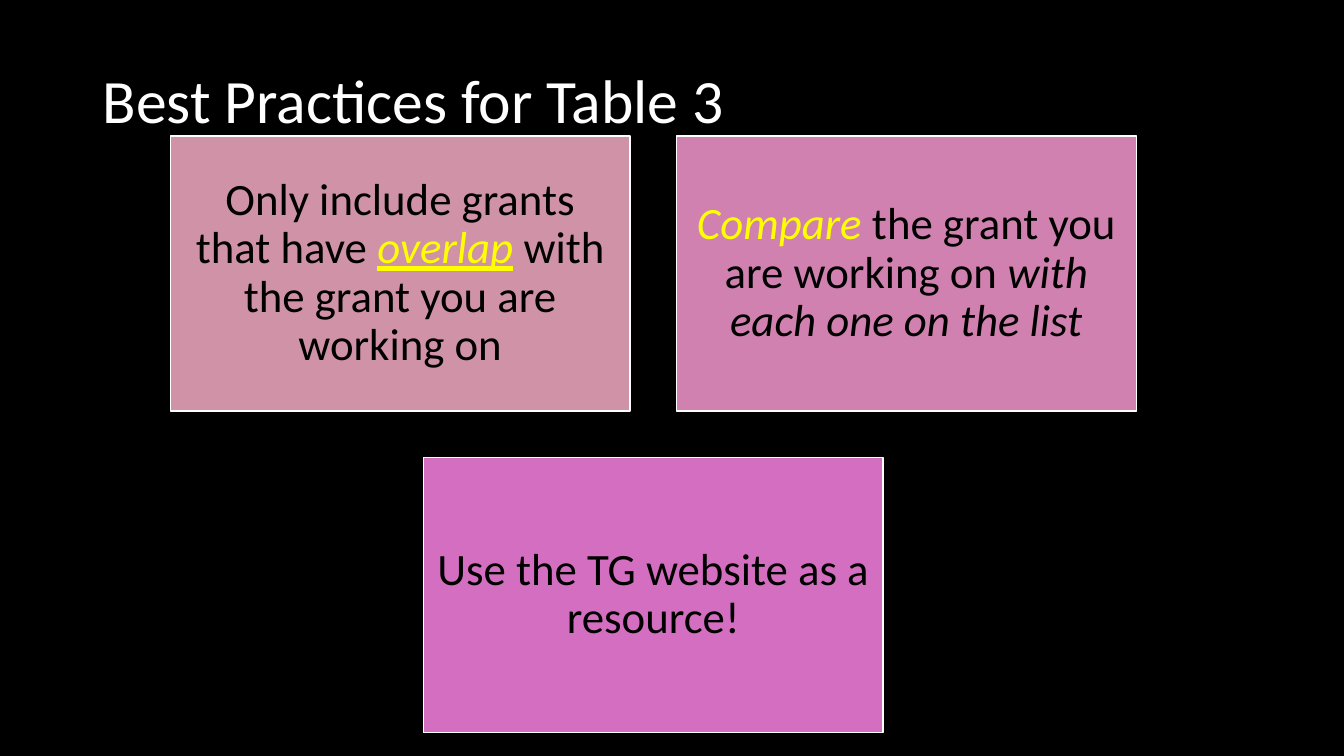
from pptx import Presentation
from pptx.dml.color import RGBColor
from pptx.enum import shapes, text
from pptx.util import Inches, Pt

HEADING = "Best Practices for Table 3"
PRACTICES = [
    ("D092A7", [("Only include grants that have ", ""),
                ("overlap", "highlight italic underline"),
                (" with the grant you are working on", "")]),
    ("D181AF", [("Compare", "highlight italic"),
                (" the grant you are working on ", ""),
                ("with each one on the list", "italic")]),
    ("D46EC1", [("Use the TG website as a resource!", "")]),
]
THEME = {
    "font": "Calibri", "heading_size": 44, "card_size": 32,
    "background": "000000", "heading": "FFFFFF", "border": "FFFFFF",
    "body": "000000", "highlight": "FFFF00",
}
SLIDE_W, SLIDE_H = 13.33, 7.5
COLUMNS = 2
CARD_W, CARD_H, GAP, INSET = 4.56, 2.73, 0.46, 0.13
GRID_LEFT, GRID_TOP = 1.69, 1.35
GRID_W = COLUMNS * CARD_W + (COLUMNS - 1) * GAP


def color(name):
    return RGBColor.from_string(THEME[name])


def style_paragraph(paragraph, size, align):
    paragraph.alignment = align
    paragraph.line_spacing = 0.9
    paragraph.font.name = THEME["font"]
    paragraph.font.size = Pt(size)


def add_heading(slide):
    heading = slide.shapes.add_textbox(Inches(0.92), Inches(0.4), Inches(11.5), Inches(1.25))
    frame = heading.text_frame
    frame.word_wrap = True
    frame.vertical_anchor = text.MSO_ANCHOR.MIDDLE
    line = frame.paragraphs[0]
    line.text = HEADING
    style_paragraph(line, THEME["heading_size"], text.PP_ALIGN.LEFT)
    line.font.color.rgb = color("heading")


def add_card(slide, left, top, fill, phrases):
    card = slide.shapes.add_shape(shapes.MSO_SHAPE.RECTANGLE, Inches(left), Inches(top),
                                  Inches(CARD_W), Inches(CARD_H))
    card.shadow.inherit = False
    card.fill.solid()
    card.fill.fore_color.rgb = RGBColor.from_string(fill)
    card.line.color.rgb = color("border")
    card.line.width = Pt(1)
    frame = card.text_frame
    frame.word_wrap = True
    frame.vertical_anchor = text.MSO_ANCHOR.MIDDLE
    frame.margin_left = frame.margin_right = Inches(INSET)
    frame.margin_top = frame.margin_bottom = Inches(INSET)
    practice = frame.paragraphs[0]
    style_paragraph(practice, THEME["card_size"], text.PP_ALIGN.CENTER)
    for words, emphasis in phrases:
        phrase = practice.add_run()
        phrase.text = words
        phrase.font.color.rgb = color("highlight" if "highlight" in emphasis else "body")
        if "italic" in emphasis:
            phrase.font.italic = True
        if "underline" in emphasis:
            phrase.font.underline = True


def main():
    deck = Presentation()
    deck.slide_width, deck.slide_height = Inches(SLIDE_W), Inches(SLIDE_H)
    slide = deck.slides.add_slide(deck.slide_layouts[6])
    slide.background.fill.solid()
    slide.background.fill.fore_color.rgb = color("background")
    add_heading(slide)
    for start in range(0, len(PRACTICES), COLUMNS):
        row = PRACTICES[start:start + COLUMNS]
        row_w = len(row) * CARD_W + (len(row) - 1) * GAP
        row_left = GRID_LEFT + (GRID_W - row_w) / 2
        top = GRID_TOP + start // COLUMNS * (CARD_H + GAP)
        for column, (fill, phrases) in enumerate(row):
            add_card(slide, row_left + column * (CARD_W + GAP), top, fill, phrases)
    deck.save("out.pptx")


if __name__ == "__main__":
    main()
